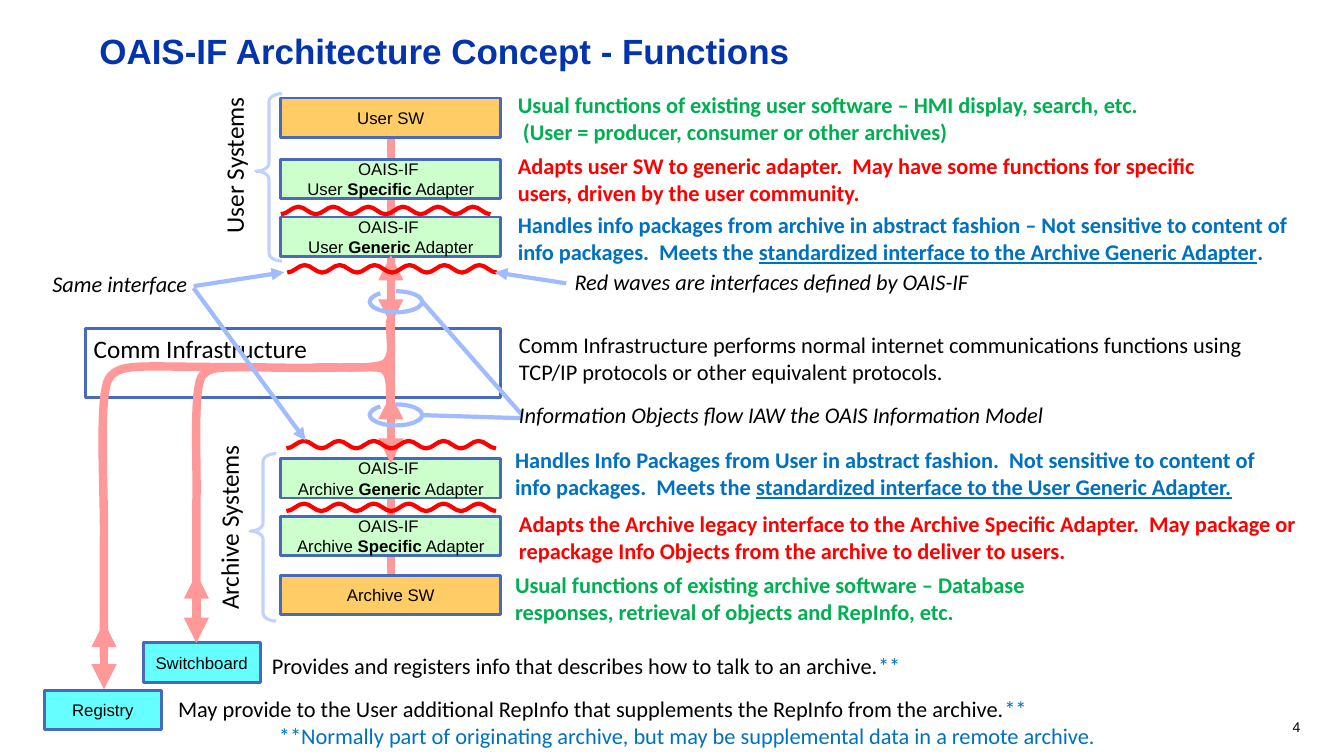
"""Build the OAIS-IF architecture concept slide."""
from lxml.etree import SubElement
from pptx import Presentation
from pptx.dml.color import RGBColor
from pptx.enum.shapes import MSO_CONNECTOR, MSO_SHAPE
from pptx.enum.text import MSO_ANCHOR, MSO_AUTO_SIZE, PP_ALIGN
from pptx.oxml.ns import qn
from pptx.util import Cm, Pt

BLACK = RGBColor(0x00, 0x00, 0x00)
WHITE = RGBColor(0xFF, 0xFF, 0xFF)
NAVY = RGBColor(0x02, 0x34, 0xAD)
GREEN = RGBColor(0x00, 0xB0, 0x50)
RED = RGBColor(0xFF, 0x00, 0x00)
BLUE = RGBColor(0x00, 0x70, 0xC0)
OUTLINE = RGBColor(0x48, 0x6A, 0xBB)
ORANGE = RGBColor(0xFF, 0xCC, 0x66)
MINT = RGBColor(0xCC, 0xFF, 0xCC)
CYAN = RGBColor(0x66, 0xFF, 0xFF)
FLOW = RGBColor(0xFF, 0x99, 0x99)
POINTER = RGBColor(0xA0, 0xBC, 0xFE)
BRACE = RGBColor(0xC0, 0xD2, 0xFE)

STACK_LEFT, STACK_WIDTH, BOX_HEIGHT = 7.08, 5.54, 0.99
TRUNK = 9.85
REGISTRY_FLOW = ((5.89, 9.25), (3.51, 9.25), (3.07, 9.14), (2.77, 9.5),
                 (2.46, 9.86), (2.64, 12.42), (2.62, 13.59),
                 (2.62, 14.58), (2.62, 15.57), (2.62, 16.56))
SWITCHBOARD_FLOW = ((9.86, 10.34), (9.8, 10.08), (9.88, 9.6), (9.75, 9.4),
                    (9.6, 9.22), (9.8, 9.25), (7.87, 9.27),
                    (5.77, 9.27), (5.38, 9.17), (5.11, 9.45),
                    (4.85, 9.73), (4.98, 11.73), (4.95, 12.65),
                    (4.95, 13.41), (4.95, 14.17), (4.95, 14.96))
USER_FLOW = ((9.83, 8.05), (9.83, 8.71), (9.93, 8.86), (9.75, 9.12),
             (9.58, 9.35), (8.26, 9.22), (7.87, 9.27))


def write(frame, paragraphs, size, color=BLACK, font="Calibri", align=PP_ALIGN.LEFT, **style):
    """Fill a text frame; each paragraph is a list of (text, changes) runs."""
    for index, spans in enumerate(paragraphs):
        para = frame.paragraphs[0] if index == 0 else frame.add_paragraph()
        para.alignment = align
        for text, changes in spans:
            for number, piece in enumerate(text.split("\n")):
                if number:
                    para.add_line_break()
                span = para.add_run()
                span.text = piece
                span.font.name = font
                span.font.size = Pt(size)
                look = {"color": color, **style, **changes}
                span.font.color.rgb = look.pop("color")
                for name, value in look.items():
                    setattr(span.font, name, value)


def add_text(page, left, top, width, height, paragraphs, size=16, turn=0, **style):
    """Add a text box and return its frame."""
    box = page.shapes.add_textbox(Cm(left), Cm(top), Cm(width), Cm(height))
    box.rotation = turn
    box.text_frame.word_wrap = turn == 0
    write(box.text_frame, paragraphs, size, **style)
    return box.text_frame


def add_outline(page, kind, left, top, width, height, color, weight):
    """Add an unfilled preset shape."""
    shape = page.shapes.add_shape(kind, Cm(left), Cm(top), Cm(width), Cm(height))
    shape.shadow.inherit = False
    shape.fill.background()
    shape.line.color.rgb = color
    shape.line.width = Pt(weight)
    return shape


def add_box(page, left, top, width, height, fill, paragraphs=()):
    """Add a filled, outlined block with centred text."""
    box = add_outline(page, MSO_SHAPE.RECTANGLE, left, top, width, height, OUTLINE, 2)
    box.fill.solid()
    box.fill.fore_color.rgb = fill
    box.text_frame.vertical_anchor = MSO_ANCHOR.MIDDLE
    write(box.text_frame, paragraphs, 12, font="Arial", align=PP_ALIGN.CENTER)


def add_adapter(page, top, side, kind):
    """Add an adapter block to the central stack."""
    add_box(page, STACK_LEFT, top, STACK_WIDTH, BOX_HEIGHT, MINT,
            [[("OAIS-IF ", {})],
             [(side + " ", {}), (kind, {"bold": True}), (" Adapter", {})]])


def add_line(page, start, end, color, weight, ends=()):
    """Add a straight line with triangles at the named ends."""
    line = page.shapes.add_connector(
        MSO_CONNECTOR.STRAIGHT, *(Cm(value) for value in (*start, *end)))
    line.line.color.rgb = color
    line.line.width = Pt(weight)
    outline = line.line._get_or_add_ln()
    for name in ends:
        SubElement(outline, qn(f"a:{name}"), type="triangle")
    SubElement(line._element.spPr, qn("a:effectLst"))


def add_curve(page, knots, color, weight):
    """Add chained cubic curves: a start, then two handles and an end each."""
    start, *rest = [(Cm(across), Cm(down)) for across, down in knots]
    builder = page.shapes.build_freeform(*start)
    builder.add_line_segments(rest, close=False)
    curve = builder.convert_to_shape()
    curve.shadow.inherit = False
    curve.fill.background()
    curve.line.color.rgb = color
    curve.line.width = Pt(weight)
    track = next(curve._element.iter(qn("a:path")))
    segments = track.findall(qn("a:lnTo"))
    for first in range(0, len(segments), 3):
        cubic = SubElement(track, qn("a:cubicBezTo"))
        for segment in segments[first:first + 3]:
            cubic.append(segment[0])
            track.remove(segment)


def add_wave(page, left, top, half=0.44, height=0.19, halves=12):
    """Add a red interface wave of alternating half cycles."""
    levels = (top + height, top)
    knots = [(left, levels[0])]
    for number in range(halves):
        across, low, high = left + half * number, levels[number % 2], levels[1 - number % 2]
        knots += [(across + half * 0.36, low), (across + half * 0.64, high), (across + half, high)]
    add_curve(page, knots, RED, 3)


def add_title(page, text):
    """Format the title placeholder."""
    title = page.shapes.title
    title.left, title.top, title.width, title.height = Cm(2.25), Cm(0.74), Cm(19.05), Cm(1.22)
    title.text_frame.auto_size = MSO_AUTO_SIZE.NONE
    title.text_frame.vertical_anchor = MSO_ANCHOR.TOP
    write(title.text_frame, [[(text, {})]], 25, NAVY, "Arial", bold=True)
    title.text_frame.paragraphs[0].line_spacing = 0.9


def add_stack(page):
    """Add the system blocks, braces and communication block."""
    add_line(page, (TRUNK, 3.45), (TRUNK, 14.5), FLOW, 6)
    for top, name in ((2.47, "User SW"), (14.5, "Archive SW")):
        add_box(page, STACK_LEFT, top, STACK_WIDTH, BOX_HEIGHT, ORANGE, [[(name, {})]])
    for top, side, kind in ((4.01, "User", "Specific"), (5.47, "User", "Generic"),
                            (11.56, "Archive", "Generic"), (13.01, "Archive", "Specific")):
        add_adapter(page, top, side, kind)
    add_box(page, 2.16, 8.28, 10.46, 1.73, WHITE)
    add_text(page, 2.11, 8.28, 5.94, 1.02, [[("Comm Infrastructure", {})]], 18)
    for left, top in ((6.45, 2.36), (6.3, 11.43)):
        brace = add_outline(page, MSO_SHAPE.LEFT_BRACE, left, top, 0.66, 4.22, BRACE, 2.25)
        brace.adjustments[0], brace.adjustments[1] = 0.308, 0.463
    for left, top, width, name in ((3.89, 3.61, 4.01, "User Systems"),
                                   (3.33, 12.67, 4.88, "Archive Systems")):
        add_text(page, left, top, width, 1.02, [[(name, {})]], 18, turn=270)
    for left, top, name in ((1.12, 17.4, "Registry"), (3.61, 16.2, "Switchboard")):
        add_box(page, left, top, 2.95, BOX_HEIGHT, CYAN, [[(name, {})]])


def add_flows(page):
    """Add the pink flows, the red waves and the pointers."""
    add_line(page, (TRUNK, 7.19), (TRUNK, 10.95), FLOW, 6)
    for knots in (REGISTRY_FLOW, SWITCHBOARD_FLOW, USER_FLOW):
        add_curve(page, knots, FLOW, 6)
    for across, top, bottom in ((TRUNK, 6.43, 8.18), (TRUNK, 9.93, 11.68),
                                (2.62, 15.67, 17.37), (4.95, 14.45, 16.2)):
        add_line(page, (across, top), (across, bottom), FLOW, 6, ("headEnd", "tailEnd"))
    for left, top in ((7.08, 5.21), (7.24, 6.68), (7.22, 11.11), (7.22, 12.69)):
        add_wave(page, left, top)
    for start, end in (((4.88, 7.26), (7.7, 11.1)), ((4.88, 7.21), (7.16, 6.86)),
                       ((14.27, 7.14), (12.47, 6.86))):
        add_line(page, start, end, POINTER, 3, ("tailEnd",))
    for top in (7.34, 10.19):
        arc = add_outline(page, MSO_SHAPE.ARC, 9.32, top, 1.32, 0.53, POINTER, 3)
        arc.adjustments[0], arc.adjustments[1] = 162, 125.084
    for start, end in (((13.16, 10.46), (10.62, 7.57)), ((13.16, 10.54), (10.64, 10.46))):
        add_line(page, start, end, POINTER, 3)


def add_notes(page):
    """Add the explanations beside the diagram."""
    under, star = {"underline": True}, ("**", {"color": BLUE})
    for left, top, width, color, paragraphs in (
        (12.8, 2.18, 18.03, GREEN, [
            [("Usual functions of existing user software – HMI display, search, etc.", {})],
            [(" (User = producer, consumer or other archives)", {})]]),
        (12.8, 3.71, 18.03, RED, [[("Adapts user SW to generic adapter.  May have some functions for specific users, driven by the user community.", {})]]),
        (12.8, 5.2, 20.73, BLUE, [[
            ("Handles info packages from archive in abstract fashion – Not sensitive to content of info packages.  Meets the ", {}),
            ("standardized interface to the Archive Generic Adapter", under), (".", {})]]),
        (12.73, 11.13, 20.09, BLUE, [[
            ("Handles Info Packages from User in abstract fashion.  Not sensitive to content of info packages.  Meets the ", {}),
            ("standardized interface to the User Generic Adapter.", under)]]),
        (12.83, 12.73, 20.73, RED, [[("Adapts the Archive legacy interface to the Archive Specific Adapter.  May package or repackage Info Objects from the archive to deliver to users.", {})]]),
        (12.73, 14.27, 18.77, GREEN, [
            [("Usual functions of existing archive software – Database \nresponses, retrieval of objects and RepInfo, etc.", {})]]),
    ):
        add_text(page, left, top, width, 1.63, paragraphs, color=color, bold=True)
    for left, top, width, text in (
        (1.07, 6.67, 3.96, "Same interface"),
        (14.23, 6.63, 15.54, "Red waves are interfaces defined by OAIS-IF"),
        (12.83, 9.98, 16.18, "Information Objects flow IAW the OAIS Information Model"),
    ):
        add_text(page, left, top, width, 0.94, [[(text, {})]], italic=True)
    add_text(page, 12.83, 8.22, 19.99, 1.9, [[("Comm Infrastructure performs normal internet communications functions using TCP/IP protocols or other equivalent protocols.", {})]])
    add_text(page, 6.6, 16.31, 16.56, 0.94, [[("Provides and registers info that describes how to talk to an archive.", {}), star]])
    registry = add_text(page, 4.24, 17.4, 24.28, 1.63, [
        [("May provide to the User additional RepInfo that supplements the RepInfo from the archive.", {}), star],
        [("**Normally part of originating archive, but may be supplemental data in a remote archive.", {"color": BLUE})]])
    registry.paragraphs[1]._p.get_or_add_pPr().set("marL", str(Cm(2.54)))
    add_text(page, 25.12, 17.98, 7.9, 0.64, [[("4", {})]], 10, font="Arial", align=PP_ALIGN.RIGHT)


def main():
    """Build and save the deck."""
    deck = Presentation()
    deck.slide_width, deck.slide_height = Cm(33.87), Cm(19.05)
    page = deck.slides.add_slide(deck.slide_layouts[5])
    add_title(page, "OAIS-IF Architecture Concept - Functions")
    add_stack(page)
    add_flows(page)
    add_notes(page)
    deck.save("out.pptx")


if __name__ == "__main__":
    main()
